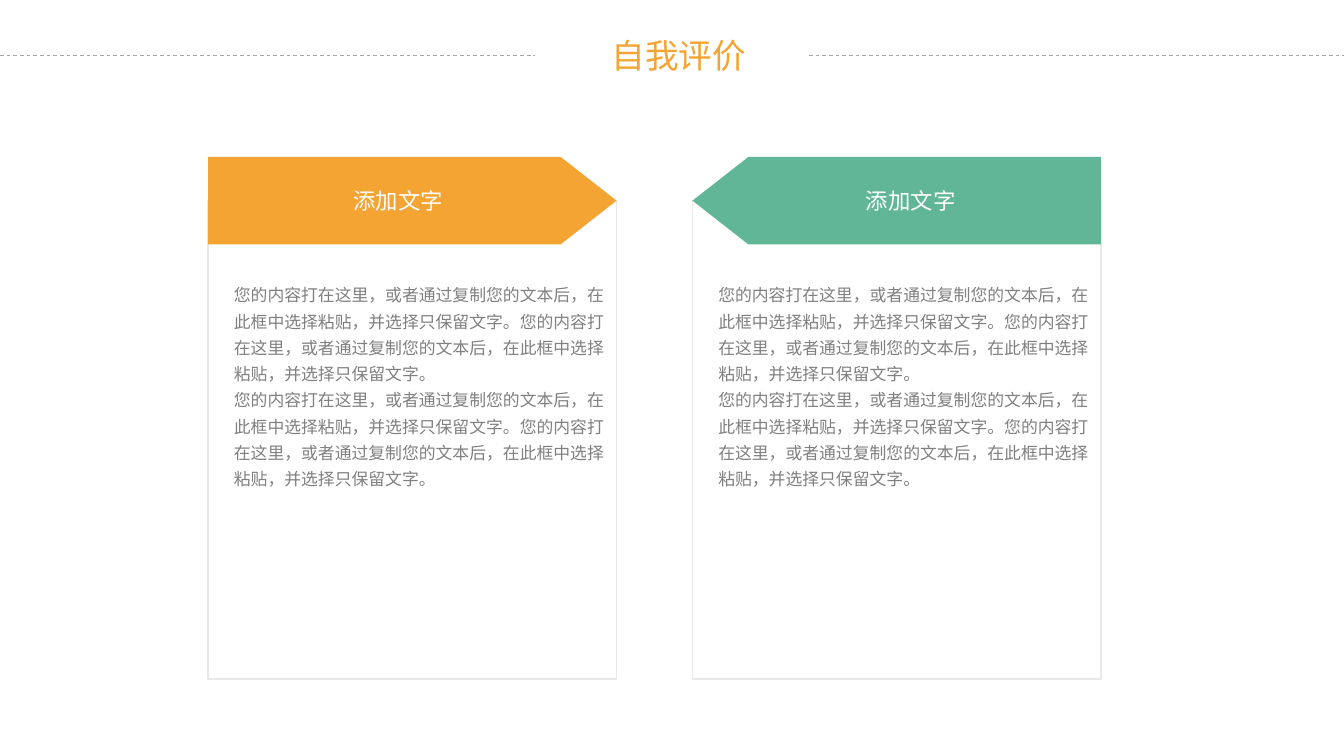
from lxml.etree import SubElement
from pptx import Presentation
from pptx.dml.color import RGBColor
from pptx.enum.dml import MSO_LINE
from pptx.enum.shapes import MSO_CONNECTOR, MSO_SHAPE
from pptx.enum.text import MSO_ANCHOR, MSO_AUTO_SIZE, PP_ALIGN
from pptx.oxml.ns import qn
from pptx.util import Pt

COLORS = {
    "orange": "F4A432",
    "green": "61B697",
    "border": "E8E8E6",
    "dash": "A6A6A6",
    "body": "808080",
    "white": "FFFFFF",
}
CJK_FONT = "Noto Sans CJK SC"
SENTENCE = "您的内容打在这里，或者通过复制您的文本后，在此框中选择粘贴，并选择只保留文字。"


def rgb(name):
    return RGBColor.from_string(COLORS[name])


def write(shape, paragraphs, size, color, latin=CJK_FONT, wrap=False,
          align=PP_ALIGN.LEFT, spacing=None):
    frame = shape.text_frame
    frame.word_wrap = wrap
    frame.margin_left = frame.margin_right = Pt(5.1)
    frame.margin_top = frame.margin_bottom = Pt(2.6)
    for index, text in enumerate(paragraphs):
        paragraph = frame.add_paragraph() if index else frame.paragraphs[0]
        paragraph.alignment = align
        if spacing:
            paragraph.line_spacing = spacing
        run = paragraph.add_run()
        run.text = text
        run.font.size = Pt(size)
        run.font.color.rgb = rgb(color)
        run.font.name = latin
        SubElement(run._r.get_or_add_rPr(), qn("a:ea")).set("typeface", CJK_FONT)


prs = Presentation()
prs.slide_width, prs.slide_height = Pt(720), Pt(405)
slide = prs.slides.add_slide(prs.slide_layouts[6])
shapes = slide.shapes

# Title between two dashed rules
title = shapes.add_textbox(Pt(322.6), Pt(15.9), Pt(83.5), Pt(27.4))
write(title, ["自我评价"], 18, "orange", latin="Calibri")
title.text_frame.auto_size = MSO_AUTO_SIZE.SHAPE_TO_FIT_TEXT

for start, end in ((0, 286.6), (433.4, 720)):
    rule = shapes.add_connector(MSO_CONNECTOR.STRAIGHT, Pt(start), Pt(29.6), Pt(end), Pt(29.6))
    rule.line.color.rgb = rgb("dash")
    rule.line.width = Pt(0.5)
    rule.line.dash_style = MSO_LINE.DASH
    SubElement(rule._element.spPr, qn("a:effectLst"))

# Two cards whose arrow headers point at each other
card_width = 218.8
for left, color, mirrored in ((111.5, "orange", False), (371, "green", True)):
    card = shapes.add_shape(MSO_SHAPE.RECTANGLE, Pt(left), Pt(107.4), Pt(card_width), Pt(256.6))
    card.shadow.inherit = False
    card.fill.background()
    card.line.color.rgb = rgb("border")
    card.line.width = Pt(1)

    header = shapes.add_shape(MSO_SHAPE.PENTAGON, Pt(left), Pt(84.1), Pt(card_width), Pt(46.8))
    header.adjustments[0] = 0.639
    header.shadow.inherit = False
    header.fill.solid()
    header.fill.fore_color.rgb = rgb(color)
    header.line.fill.background()
    if mirrored:
        header._element.spPr.find(qn("a:xfrm")).set("flipH", "1")
    write(header, ["添加文字"], 12, "white", align=PP_ALIGN.CENTER)
    header.text_frame.vertical_anchor = MSO_ANCHOR.MIDDLE

    body = shapes.add_textbox(Pt(left + 8.7), Pt(146.9), Pt(210.2), Pt(117.4))
    write(body, [SENTENCE * 2] * 2, 9, "body", wrap=True, spacing=1.3)
    body.text_frame.auto_size = MSO_AUTO_SIZE.SHAPE_TO_FIT_TEXT

prs.save("out.pptx")
